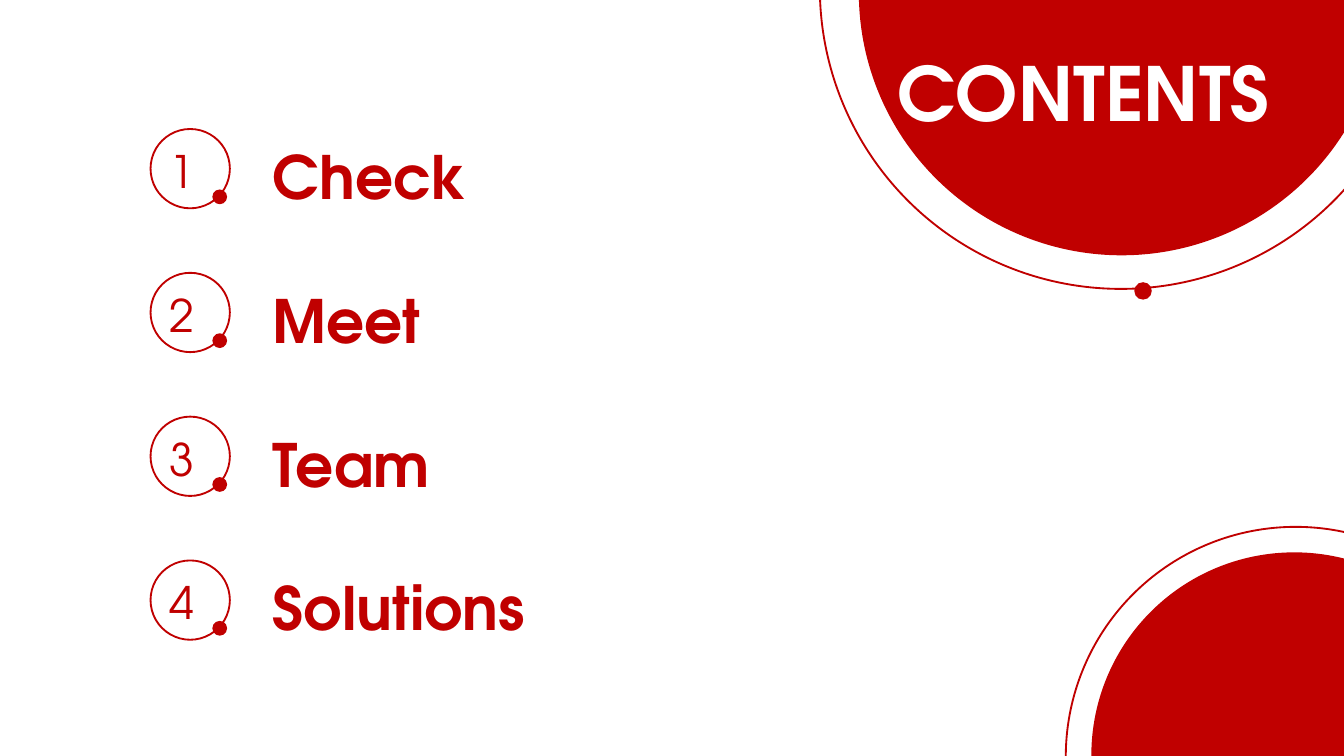
from pptx import Presentation
from pptx.dml.color import RGBColor
from pptx.enum.shapes import MSO_SHAPE
from pptx.enum.text import MSO_ANCHOR, MSO_AUTO_SIZE, PP_ALIGN
from pptx.util import Inches, Pt

OVAL = MSO_SHAPE.OVAL
TOP = MSO_ANCHOR.TOP
NO_AUTOFIT = MSO_AUTO_SIZE.NONE
LEFT, JUSTIFY = PP_ALIGN.LEFT, PP_ALIGN.JUSTIFY

RED = RGBColor(0xC0, 0x00, 0x00)
WHITE = RGBColor(0xFF, 0xFF, 0xFF)
FONT = "TeX Gyre Adventor"
TITLE_ONLY = 5

# Content
TITLE = "CONTENTS"
ITEMS = ["Check", "Meet", "Team", "Solutions"]

# Agenda rows
FIRST_ROW_TOP = 0.96
ROW_PITCH = 1.07

# Corner decorations: left, top, diameter
TOP_DISC = (6.39, -2.01, 3.91)
TOP_RING = (6.1, -2.33, 4.48)
TOP_DOT = (8.44, 2.1, 0.13)
BOTTOM_DISC = (8.12, 4.11, 3.02)
BOTTOM_RING = (7.93, 3.92, 3.42)


def add_circle(shapes, left, top, diameter):
    circle = shapes.add_shape(OVAL, Inches(left), Inches(top),
                              Inches(diameter), Inches(diameter))
    circle.shadow.inherit = False
    return circle


def add_disc(shapes, left, top, diameter):
    disc = add_circle(shapes, left, top, diameter)
    disc.fill.solid()
    disc.fill.fore_color.rgb = RED
    disc.line.fill.background()


def add_ring(shapes, left, top, diameter):
    ring = add_circle(shapes, left, top, diameter)
    ring.fill.background()
    ring.line.color.rgb = RED
    ring.line.width = Pt(1)


def write_text(shape, text, size, color, bold, alignment, insets):
    frame = shape.text_frame
    frame.word_wrap = True
    frame.auto_size = NO_AUTOFIT
    frame.vertical_anchor = TOP
    frame.margin_left = frame.margin_right = Inches(insets[0])
    frame.margin_top = frame.margin_bottom = Inches(insets[1])
    paragraph = frame.paragraphs[0]
    paragraph.alignment = alignment
    paragraph.line_spacing = 1.0
    run = paragraph.add_run()
    run.text = text
    run.font.name = FONT
    run.font.size = Pt(size)
    run.font.bold = bold
    run.font.color.rgb = color


def add_label(shapes, left, top, width, height, *text_settings):
    box = shapes.add_textbox(Inches(left), Inches(top),
                             Inches(width), Inches(height))
    write_text(box, *text_settings)


def add_agenda_row(slide, number, label, top):
    badge = slide.shapes.add_group_shape().shapes
    add_label(badge, 1.16, top + 0.06, 0.52, 0.5,
              str(number), 24, RED, False, JUSTIFY, (0.1, 0.05))
    add_ring(badge, 1.12, top, 0.59)
    add_disc(badge, 1.58, top + 0.45, 0.11)
    add_label(slide.shapes, 1.96, top + 0.04, 3.16, 0.61,
              label, 32, RED, True, LEFT, (0.07, 0.04))


def main():
    presentation = Presentation()
    presentation.slide_width = Inches(10)
    presentation.slide_height = presentation.slide_width * 9 // 16
    slide = presentation.slides.add_slide(presentation.slide_layouts[TITLE_ONLY])
    slide.background.fill.solid()
    slide.background.fill.fore_color.rgb = WHITE

    # Top corner
    add_disc(slide.shapes, *TOP_DISC)
    orbit = slide.shapes.add_group_shape().shapes
    add_disc(orbit, *TOP_DOT)
    add_ring(orbit, *TOP_RING)

    # Title, raised above the disc
    title = slide.shapes.title
    title.left, title.top = Inches(6.61), Inches(0.31)
    title.width, title.height = Inches(3.14), Inches(0.75)
    write_text(title, TITLE, 40, WHITE, True, JUSTIFY, (0.07, 0.04))
    slide.shapes._spTree.append(title._element)

    # Agenda
    for index, label in enumerate(ITEMS):
        add_agenda_row(slide, index + 1, label,
                       FIRST_ROW_TOP + index * ROW_PITCH)

    # Bottom corner
    corner = slide.shapes.add_group_shape().shapes
    add_disc(corner, *BOTTOM_DISC)
    add_ring(corner, *BOTTOM_RING)

    presentation.save("out.pptx")


if __name__ == "__main__":
    main()
